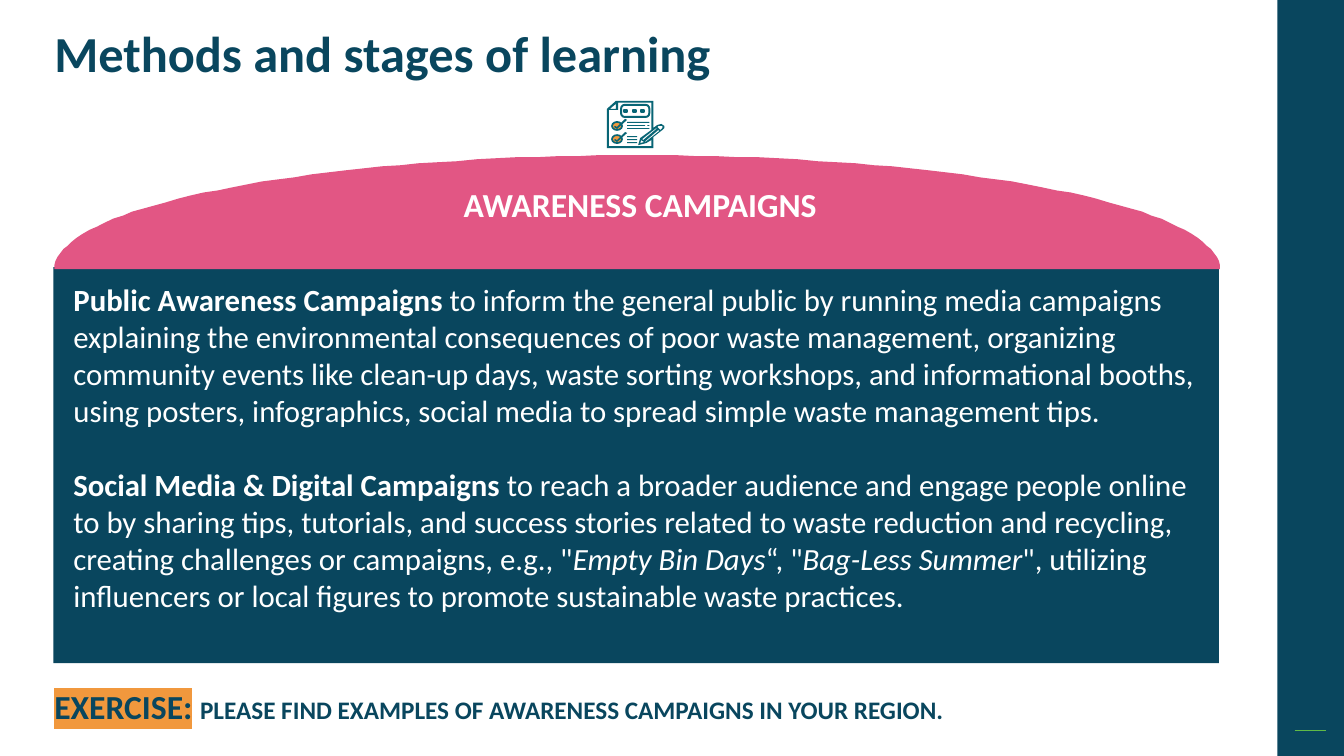
from math import cos, pi, sin

from lxml.etree import SubElement
from pptx import Presentation
from pptx.dml.color import RGBColor
from pptx.enum.shapes import MSO_CONNECTOR as Link, MSO_SHAPE as Kind
from pptx.enum.text import PP_ALIGN as Align
from pptx.oxml.ns import qn
from pptx.util import Emu, Pt

PX = 9144  # 100 px to the inch
NAVY, PINK, ORANGE, TEAL = "09465E", "E25684", "F1983D", "086575"
WHITE, GREEN = "FFFFFF", "60BA47"

TITLE = [[("Methods and stages of learning", "b")]]
HEAD = [[("AWARENESS CAMPAIGNS", "b")]]
BODY = [
    [("Public Awareness Campaigns", "b"),
     (" to inform the general public by running media campaigns explaining "
      "the environmental consequences of poor waste management, organizing "
      "community events like clean-up days, waste sorting workshops, and "
      "informational booths, using posters, infographics, social media to "
      "spread simple waste management tips.", "")],
    [("Social Media & Digital Campaigns", "b"),
     (" to reach a broader audience and engage people online to by sharing "
      "tips, tutorials, and success stories related to waste reduction and "
      "recycling, creating challenges or campaigns, e.g., \"", ""),
     ("Empty Bin Days", "i"), ("“, \"", ""), ("Bag-Less Summer", "i"),
     ("\", utilizing influencers or local figures to promote sustainable "
      "waste practices.", "")],
]
TASK = [[("EXERCISE:", "bh"), (" ", "b"),
         ("PLEASE FIND EXAMPLES OF AWARENESS CAMPAIGNS IN YOUR REGION.", "bs")]]

# Checklist icon: page and pencil outlines, then the gaps cut out of them
PAGE = [
    [(611, 100), (648, 100), (648, 127), (652, 124), (656, 123), (659, 125),
     (659, 127), (657, 129), (648, 136), (648, 147), (602, 147), (602, 108)],
    [(646, 102), (613, 102), (613, 109), (604, 109), (604, 145), (646, 145),
     (646, 139), (641, 142), (633, 144), (635, 137), (646, 129)],
    [(651, 127), (637, 138), (638, 139), (651, 128)],
    [(640, 141), (654, 130), (653, 129), (640, 140)],
    [(605, 108), (611, 108), (611, 103)],
    [(655, 129), (657, 127), (657, 125), (653, 125), (652, 126)],
    [(636, 139), (635, 142), (639, 141)],
]
TICK = [(609, 126), (610, 125), (612, 126), (620, 118), (622, 119), (612, 128)]
STEP = 13  # from the upper tick to the lower one
BARS = [(622, 121, 22), (622, 124, 18), (642, 124, 2), (622, 127, 22),
        (622, 135, 10), (622, 138, 10), (622, 141, 10)]
DOTS = [618, 627, 635]

prs = Presentation()
prs.slide_width, prs.slide_height = Emu(1333 * PX), Emu(750 * PX)
slide = prs.slides.add_slide(prs.slide_layouts[6])
shapes = slide.shapes


def color(code):
    return RGBColor.from_string(code)


def paint(shape, fill=None, line=None, width=1):
    shape.shadow.inherit = False
    if fill:
        shape.fill.solid()
        shape.fill.fore_color.rgb = color(fill)
    else:
        shape.fill.background()
    if line:
        shape.line.color.rgb = color(line)
        shape.line.width = Pt(width)
    else:
        shape.line.fill.background()


def draw(kind, box, **look):
    shape = shapes.add_shape(kind, *(Emu(n * PX) for n in box))
    paint(shape, **look)
    return shape


def trace(rings, fill):
    """Fill closed outlines; an outline inside another one is a hole."""
    pen = shapes.build_freeform(*rings[0][0], scale=PX)
    pen.add_line_segments(rings[0][1:])
    for ring in rings[1:]:
        pen.move_to(*ring[0])
        pen.add_line_segments(ring[1:])
    paint(pen.convert_to_shape(), fill)


def write(box, paras, size, ink=NAVY, align=Align.LEFT, gap=0, lead=None):
    """Run marks: b bold, i italic, h highlighted, s small."""
    frame = shapes.add_textbox(*(Emu(n * PX) for n in box)).text_frame
    frame.word_wrap = True
    for i, runs in enumerate(paras):
        para = frame.add_paragraph() if i else frame.paragraphs[0]
        para.alignment = align
        if lead:
            para.line_spacing = lead
        if i:
            para.space_before = Pt(gap)
        for text, marks in runs:
            run = para.add_run()
            run.text = text
            font = run.font
            font.name = "Calibri"
            font.size = Pt(18 if "s" in marks else size)
            font.bold, font.italic = "b" in marks, "i" in marks
            font.color.rgb = color(ink)
            if "h" in marks:
                props = run._r.get_or_add_rPr()
                mark = SubElement(props, qn("a:highlight"))
                SubElement(mark, qn("a:srgbClr"), val=ORANGE)
                props.find(qn("a:solidFill")).addnext(mark)


def arch(left, top, wide, high, steps=90):
    """Upper half of an ellipse, as points."""
    half = wide / 2
    turns = [pi * n / steps for n in range(steps + 1)]
    return [(left + half - half * cos(t), top + high - high * sin(t))
            for t in turns]


# Side band
draw(Kind.RECTANGLE, (1267, 0, 66, 750), fill=NAVY)
rule = shapes.add_connector(
    Link.STRAIGHT, *(Emu(n * PX) for n in (1284, 725, 1315, 725)))
rule.line.color.rgb = color(GREEN)
rule.line.width = Pt(1)
SubElement(rule._element.spPr, qn("a:effectLst"))

# Panel under its dome
write((44, 24, 874, 58), TITLE, 36, lead=0.9)
draw(Kind.RECTANGLE, (53, 265, 1156, 393), fill=NAVY)
trace([arch(54, 154, 1156, 113)], PINK)
write((146, 178, 978, 50), HEAD, 24, ink=WHITE, align=Align.CENTER)
write((63, 274, 1146, 370), BODY, 22, ink=WHITE, gap=26.4)

# Icon
trace(PAGE, TEAL)
bubble = draw(Kind.ROUNDED_RECTANGLE, (616, 104, 28, 12), line=TEAL, width=1.4)
bubble.adjustments[0] = 0.3
for x in DOTS:
    draw(Kind.RECTANGLE, (x + 1, 109, 3, 2), line=TEAL, width=1.2)
for drop in (0, STEP):
    draw(Kind.OVAL, (607, 121 + drop, 10, 8), fill=ORANGE, line=TEAL, width=1.2)
    trace([[(x, y + drop) for x, y in TICK]], TEAL)
for x, y, wide in BARS:
    draw(Kind.RECTANGLE, (x, y, wide, 1), fill=TEAL)

write((44, 676, 1164, 50), TASK, 24)
prs.save("out.pptx")
